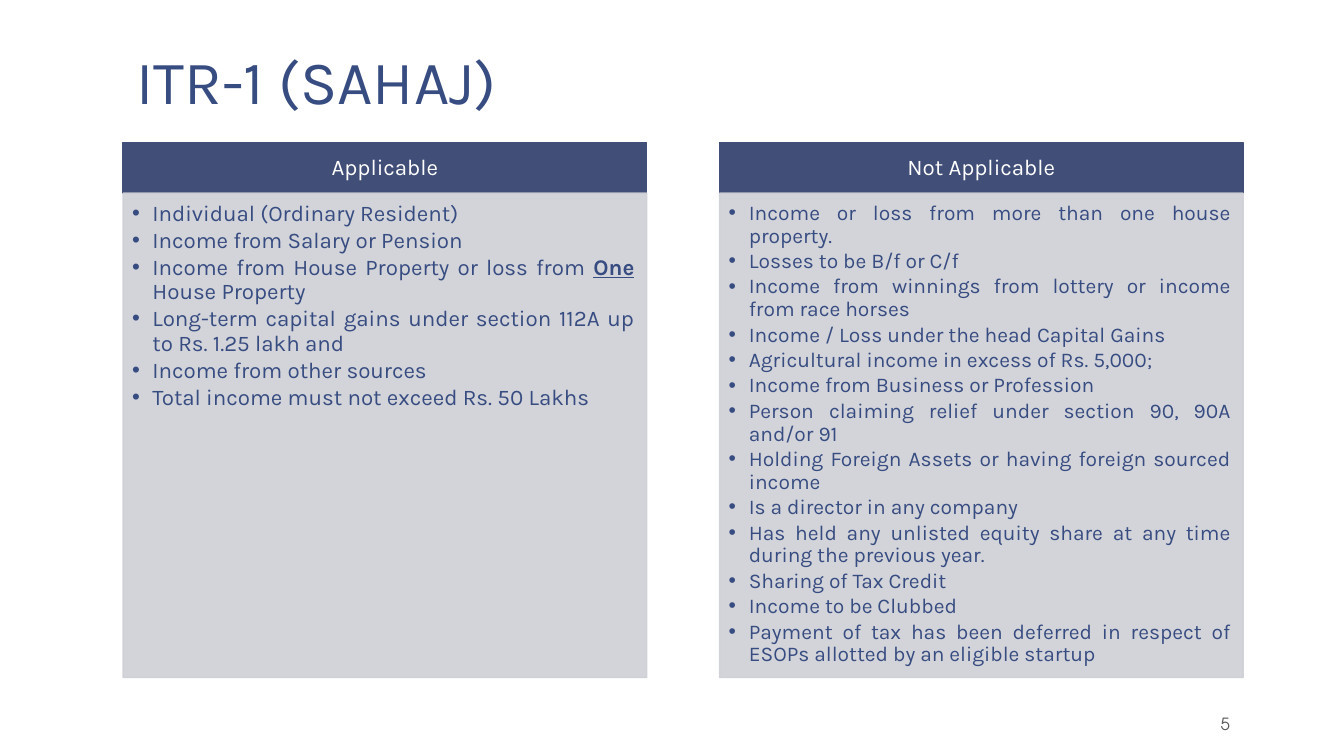
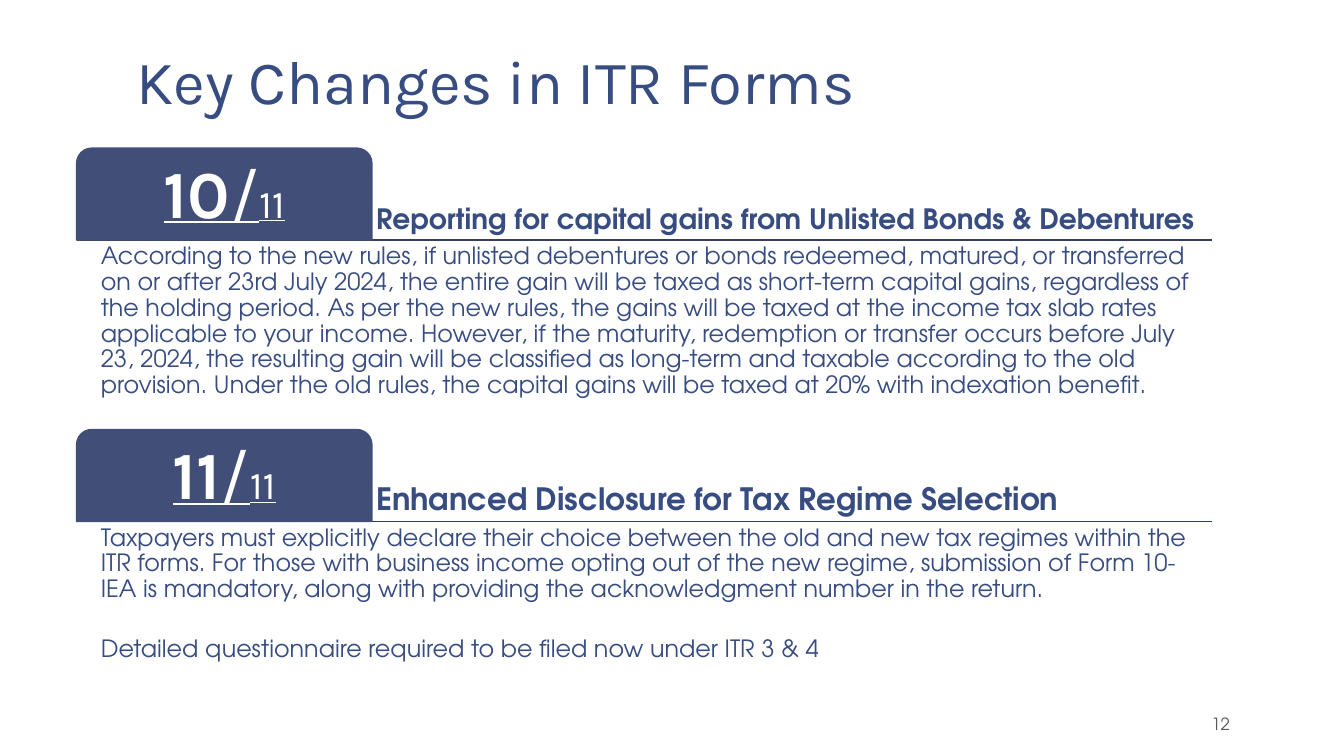
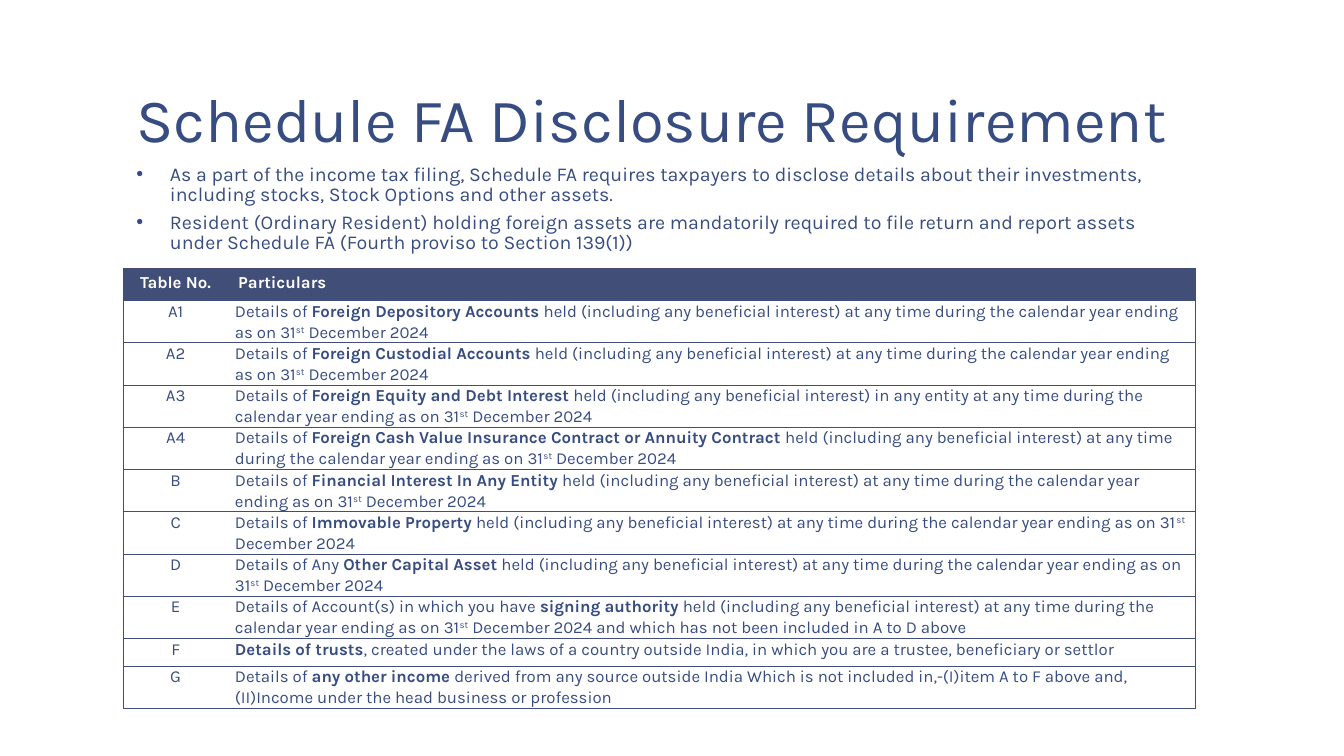
"""Build three slides on income tax return forms and their disclosures."""
from lxml import etree
from pptx import Presentation
from pptx.dml.color import RGBColor
from pptx.enum import shapes, text
from pptx.oxml.ns import qn
from pptx.util import Pt

NAVY = RGBColor(0x41, 0x4E, 0x77)
INK = RGBColor(0x37, 0x4C, 0x81)
RULE = RGBColor(0x34, 0x3E, 0x5F)
PANEL = RGBColor(0xCF, 0xD0, 0xD6)
GREY = RGBColor(0x59, 0x59, 0x59)
WHITE = RGBColor(0xFF, 0xFF, 0xFF)
KARLA, ADVENTOR = "Karla", "TeX Gyre Adventor"
LEFT, CENTER = text.PP_ALIGN.LEFT, text.PP_ALIGN.CENTER
RIGHT, JUSTIFY = text.PP_ALIGN.RIGHT, text.PP_ALIGN.JUSTIFY
TOP, MIDDLE, BOTTOM = text.MSO_ANCHOR.TOP, text.MSO_ANCHOR.MIDDLE, text.MSO_ANCHOR.BOTTOM
BOLD = {"bold": True}
SUPER = {"superscript": True}
PAGE_INSETS = (9.4, 5, 9.4, 5)

ELIGIBILITY = [
    ("Applicable", 16, [
        "Individual (Ordinary Resident)",
        "Income from Salary or Pension",
        ["Income from House Property or loss from ",
         ("One", {"bold": True, "underline": True}), " House Property"],
        "Long-term capital gains under section 112A up to Rs. 1.25 lakh and",
        "Income from other sources",
        "Total income must not exceed Rs. 50 Lakhs",
    ]),
    ("Not Applicable", 15, [
        "Income or loss from more than one house property.",
        "Losses to be B/f or C/f",
        "Income from winnings from lottery or income from race horses",
        "Income / Loss under the head Capital Gains",
        "Agricultural income in excess of Rs. 5,000;",
        "Income from Business or Profession",
        "Person claiming relief under section 90, 90A and/or 91",
        "Holding Foreign Assets or having foreign sourced income",
        "Is a director in any company",
        "Has held any unlisted equity share at any time during the previous year.",
        "Sharing of Tax Credit",
        "Income to be Clubbed",
        "Payment of tax has been deferred in respect of ESOPs allotted by an eligible startup",
    ]),
]

CHANGES = [
    ("10", "Reporting for capital gains from Unlisted Bonds & Debentures", 20, [
        "According to the new rules, if unlisted debentures or bonds redeemed, matured, or "
        "transferred on or after 23rd July 2024, the entire gain will be taxed as short-term "
        "capital gains, regardless of the holding period. As per the new rules, the gains will "
        "be taxed at the income tax slab rates applicable to your income. However, if the "
        "maturity, redemption or transfer occurs before July 23, 2024, the resulting gain will "
        "be classified as long-term and taxable according to the old provision. Under the old "
        "rules, the capital gains will be taxed at 20% with indexation benefit.",
    ]),
    ("11", "Enhanced Disclosure for Tax Regime Selection", 22, [
        "Taxpayers must explicitly declare their choice between the old and new tax regimes "
        "within the ITR forms. For those with business income opting out of the new regime, "
        "submission of Form 10-IEA is mandatory, along with providing the acknowledgment "
        "number in the return.",
        "Detailed questionnaire required to be filed now under ITR 3 & 4",
    ]),
]

FA_POINTS = [
    "As a part of the income tax filing, Schedule FA requires taxpayers to disclose details "
    "about their investments, including stocks, Stock Options and other assets.",
    "Resident (Ordinary Resident) holding foreign assets are mandatorily required to file "
    "return and report assets under Schedule FA (Fourth proviso to Section 139(1))",
]


def held(asset, lead="Details of ", scope="", tail=""):
    """Return the runs of a row about something held during the calendar year."""
    return [lead, (asset, BOLD),
            f" held (including any beneficial interest) {scope}at any time during the "
            "calendar year ending as on 31", ("st", SUPER), f" December 2024{tail}"]


FA_HEADER = ("Table No.", "Particulars")
FA_ROWS = [
    ("A1", held("Foreign Depository Accounts")),
    ("A2", held("Foreign Custodial Accounts")),
    ("A3", held("Foreign Equity and Debt Interest", scope="in any entity ")),
    ("A4", held("Foreign Cash Value Insurance Contract or Annuity Contract")),
    ("B", held("Financial Interest In Any Entity")),
    ("C", held("Immovable Property")),
    ("D", held("Other Capital Asset", lead="Details of Any ")),
    ("E", held("signing authority", lead="Details of Account(s) in which you have ",
               tail=" and which has not been included in A to D above")),
    ("F", [("Details of trusts", BOLD),
           ", created under the laws of a country outside India, in which you are a trustee, "
           "beneficiary or settlor"]),
    ("G", ["Details of ", ("any other income", BOLD),
           " derived from any source outside India Which is not included in,-(I)item A to F "
           "above and, (II)Income under the head business or profession"]),
]


def add_bullet(paragraph, indent):
    """Give a paragraph a hanging bullet."""
    props = paragraph._p.get_or_add_pPr()
    props.set("marL", str(Pt(indent)))
    props.set("indent", str(-Pt(indent)))
    etree.SubElement(props, qn("a:buFont")).set("typeface", "Arial")
    etree.SubElement(props, qn("a:buChar")).set("char", "•")


def add_run(paragraph, words, size, font, color, **extra):
    """Append one formatted run."""
    run = paragraph.add_run()
    run.text = words
    if extra.pop("superscript", False):
        run._r.get_or_add_rPr().set("baseline", "30000")
    for key, value in {"size": Pt(size), "name": font, **extra}.items():
        setattr(run.font, key, value)
    run.font.color.rgb = color


def write(frame, paragraphs, size, font=KARLA, color=INK, align=LEFT, anchor=TOP,
          insets=(0, 0, 0, 0), spacing=0.9, before=0, after=0, bullet=0, **extra):
    """Fill a text frame; a paragraph is a string or a list of runs."""
    sides = dict(zip(("margin_left", "margin_top", "margin_right", "margin_bottom"),
                     map(Pt, insets)))
    for key, value in {"word_wrap": True, "auto_size": text.MSO_AUTO_SIZE.NONE,
                       "vertical_anchor": anchor, **sides}.items():
        setattr(frame, key, value)
    for index, content in enumerate(paragraphs):
        paragraph = frame.add_paragraph() if index else frame.paragraphs[0]
        if bullet:
            add_bullet(paragraph, bullet)
        for key, value in {"alignment": align, "line_spacing": spacing,
                           "space_before": Pt(before if index else 0),
                           "space_after": Pt(after)}.items():
            setattr(paragraph, key, value)
        for part in [content] if isinstance(content, str) else content:
            words, style = (part, {}) if isinstance(part, str) else part
            add_run(paragraph, words, **{"size": size, "font": font, "color": color,
                                         **extra, **style})


def add_text(slide, box, paragraphs, size, **style):
    """Add a text box."""
    frame = slide.shapes.add_textbox(*map(Pt, box)).text_frame
    write(frame, paragraphs, size, **style)


def add_block(slide, kind, box, color, alpha=100):
    """Add a flat filled shape with a line of the same colour."""
    block = slide.shapes.add_shape(kind, *map(Pt, box))
    block.shadow.inherit = False
    block.fill.solid()
    block.fill.fore_color.rgb = color
    block.line.color.rgb = color
    block.line.width = Pt(1)
    if alpha < 100:
        for tint in block._element.spPr.iter(qn("a:srgbClr")):
            etree.SubElement(tint, qn("a:alpha")).set("val", str(alpha * 1000))
    return block


def add_slide(deck, heading, number=None, anchor=MIDDLE):
    """Add a title-only slide with the shared title and page number."""
    slide = deck.slides.add_slide(deck.slide_layouts[5])
    title = slide.shapes.title
    for key, value in zip(("left", "top", "width", "height"), (88, 6, 800, 110)):
        setattr(title, key, Pt(value))
    write(title.text_frame, [heading], 44, anchor=anchor, insets=PAGE_INSETS, spacing=0.85)
    if number:
        add_text(slide, (801, 504, 87, 25), [number], 12, font=ADVENTOR, color=GREY,
                 align=RIGHT, anchor=BOTTOM, insets=PAGE_INSETS, spacing=1.0)
    return slide


def set_borders(cell, visible):
    """Draw the named cell borders and clear the others."""
    props = cell._tc.get_or_add_tcPr()
    for side in "LRTB":
        edge = etree.SubElement(props, qn(f"a:ln{side}"))
        edge.set("w", str(Pt(0.5)))
        if side in visible:
            fill = etree.SubElement(edge, qn("a:solidFill"))
            etree.SubElement(fill, qn("a:srgbClr")).set("val", str(NAVY))
        else:
            etree.SubElement(edge, qn("a:noFill"))


def build_eligibility(deck):
    """Show who may and may not use the form, side by side."""
    slide = add_slide(deck, "ITR-1 (SAHAJ)", "5")
    rect = shapes.MSO_SHAPE.RECTANGLE
    left, top, width, step, header = 88, 102, 374, 426, 36
    for index, (label, size, conditions) in enumerate(ELIGIBILITY):
        x = left + index * step
        banner = add_block(slide, rect, (x, top, width, header), NAVY)
        write(banner.text_frame, [label], 16, color=WHITE, align=CENTER, anchor=MIDDLE)
        panel = add_block(slide, rect, (x, top + header, width, 346), PANEL, 90)
        write(panel.text_frame, conditions, size, align=JUSTIFY, after=size * 0.13,
              bullet=14.4, insets=(6.5, 6.5, 8.8, 9.8))


def build_changes(deck):
    """Show the numbered changes, each under a tab."""
    slide = add_slide(deck, "Key Changes in ITR Forms", "12")
    left, top, step, tab_width, tab_height, width = 54.7, 105.8, 201, 211, 65.7, 810.8
    for index, (number, heading, size, details) in enumerate(CHANGES):
        y = top + index * step
        base = y + tab_height
        rule = slide.shapes.add_connector(shapes.MSO_CONNECTOR.STRAIGHT, Pt(left), Pt(base),
                                          Pt(left + width), Pt(base))
        rule.line.color.rgb = RULE
        rule.line.width = Pt(1)
        etree.SubElement(rule._element.spPr, qn("a:effectLst"))
        add_text(slide, (left + tab_width, y, width - tab_width, tab_height), [heading], size,
                 font=ADVENTOR, anchor=BOTTOM, insets=(3, 3, 3, 3), bold=True)
        tab = add_block(slide, shapes.MSO_SHAPE.ROUND_2_SAME_RECTANGLE,
                        (left, y, tab_width, tab_height), NAVY)
        write(tab.text_frame, [[(number, BOLD), "/", ("11", {"size": 28})]], 48, color=WHITE,
              align=CENTER, anchor=MIDDLE, underline=True)
        add_text(slide, (left, base, width, 132), details, 17, font=ADVENTOR,
                 before=24, insets=(17.3, 3, 3, 3))


def build_schedule(deck):
    """Show the foreign asset schedule as a table."""
    slide = add_slide(deck, "Schedule FA Disclosure Requirement", anchor=BOTTOM)
    add_text(slide, (88, 113, 766, 78), FA_POINTS, 14, insets=PAGE_INSETS, spacing=0.85,
             before=6, bullet=24)
    widths = (75, 691)
    heights = [23] + [19.6 if code == "F" else 30.2 for code, _ in FA_ROWS]
    table = slide.shapes.add_table(len(heights), len(widths), Pt(88), Pt(191.5),
                                   Pt(sum(widths)), Pt(sum(heights))).table
    table.horz_banding = False
    for column, width in zip(table.columns, widths):
        column.width = Pt(width)
    for r, (values, height) in enumerate(zip([FA_HEADER] + FA_ROWS, heights)):
        table.rows[r].height = Pt(height)
        for c, value in enumerate(values):
            cell = table.cell(r, c)
            style = {"align": LEFT if c else CENTER}
            if r:
                style.update(spacing=1.07)
                insets = (4.9, 0, 4.9, 0)
            else:
                style.update(spacing=1.0, color=WHITE, bold=True)
                insets = (7.2, 3.6, 7.2, 3.6)
            for side, inset in zip(("left", "top", "right", "bottom"), insets):
                setattr(cell, f"margin_{side}", Pt(inset))
            set_borders(cell, "TBR" if c else "TBL")
            if r:
                cell.fill.background()
            else:
                cell.fill.solid()
                cell.fill.fore_color.rgb = NAVY
            paragraph = cell.text_frame.paragraphs[0]
            paragraph.alignment = style.pop("align")
            paragraph.line_spacing = style.pop("spacing")
            for part in [value] if isinstance(value, str) else value:
                words, extra = (part, {}) if isinstance(part, str) else part
                add_run(paragraph, words, **{"size": 12, "font": KARLA, "color": INK,
                                             **style, **extra})


def main():
    """Build and save the deck."""
    deck = Presentation()
    deck.slide_width, deck.slide_height = Pt(960), Pt(540)
    build_eligibility(deck)
    build_changes(deck)
    build_schedule(deck)
    deck.save("out.pptx")


if __name__ == "__main__":
    main()
